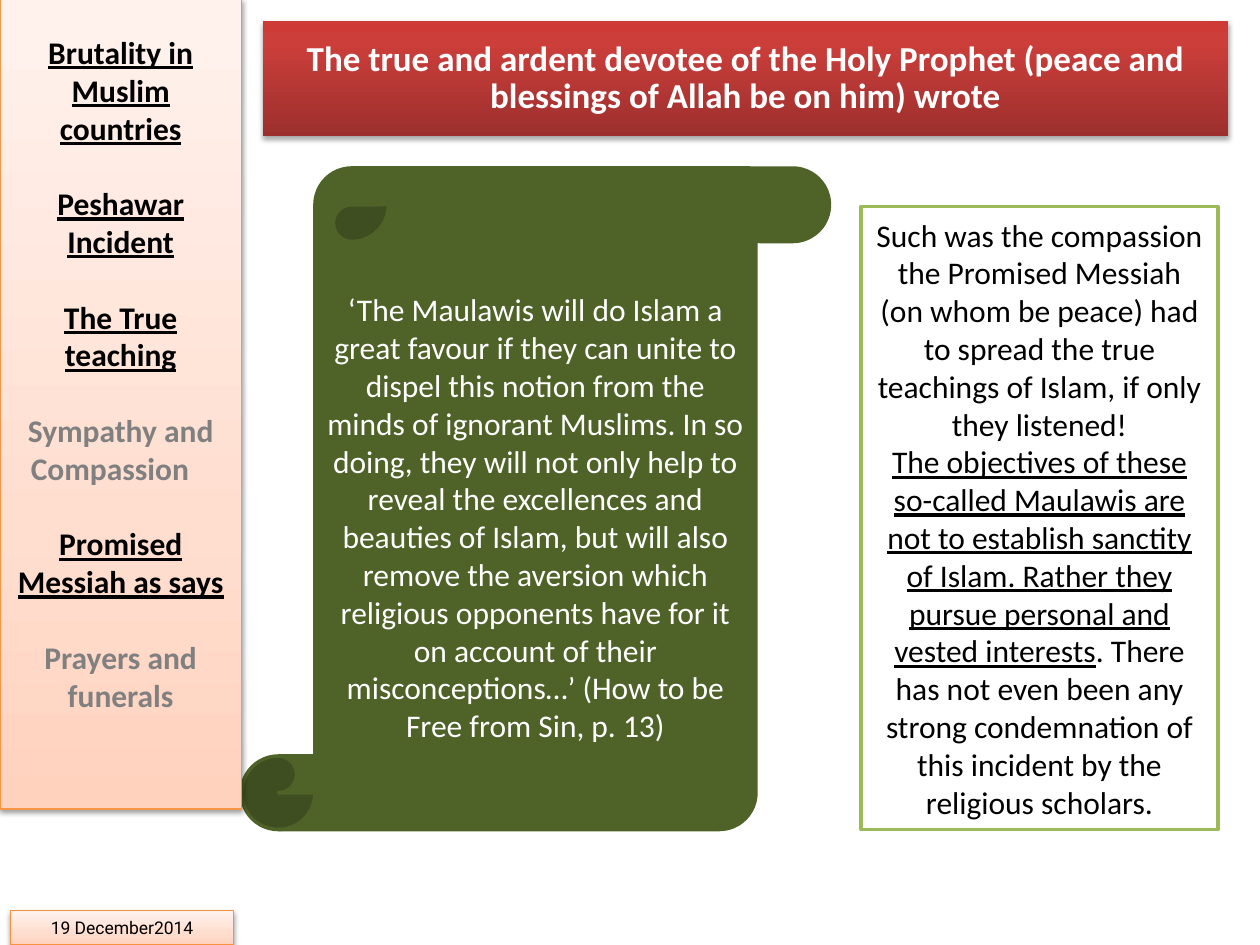
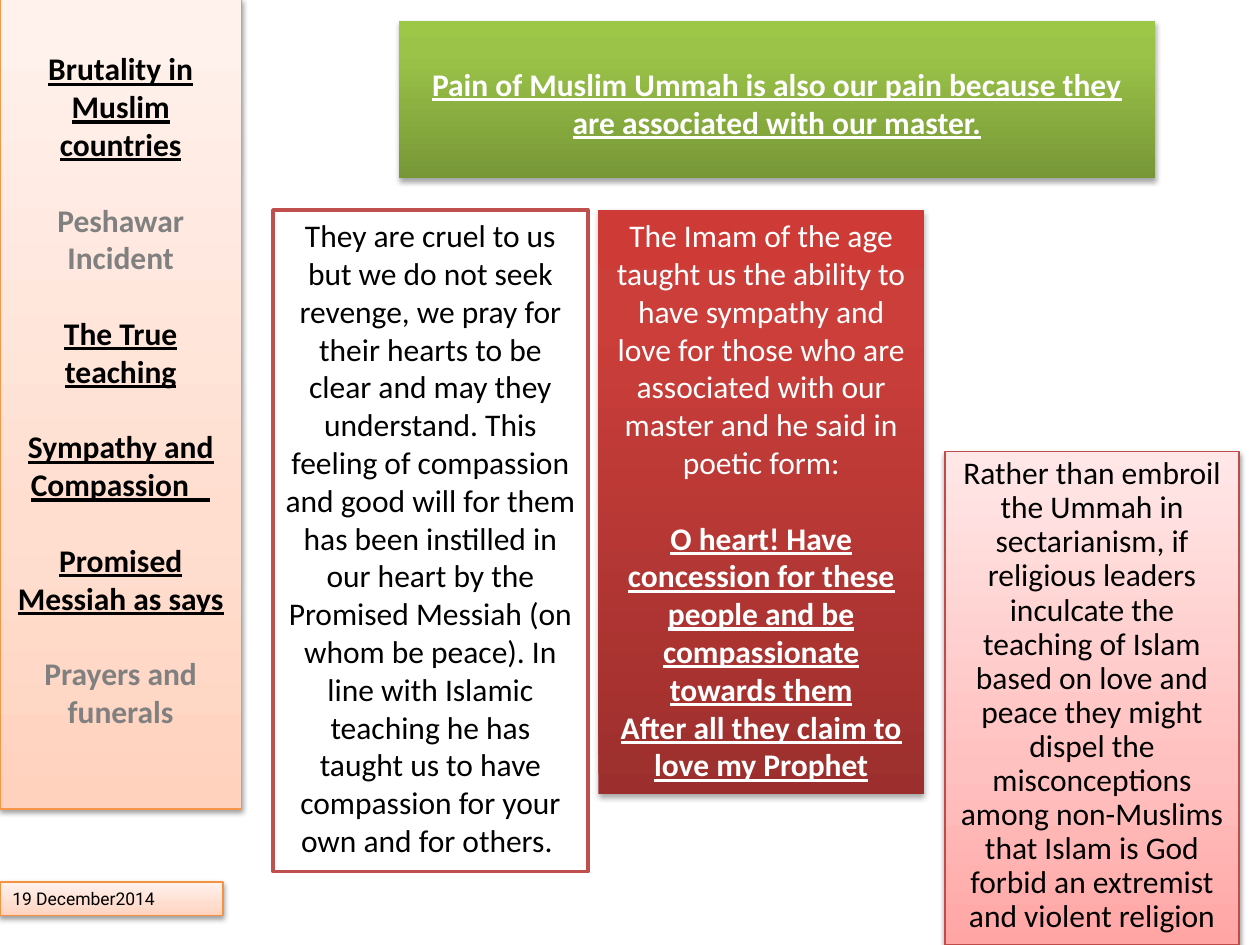
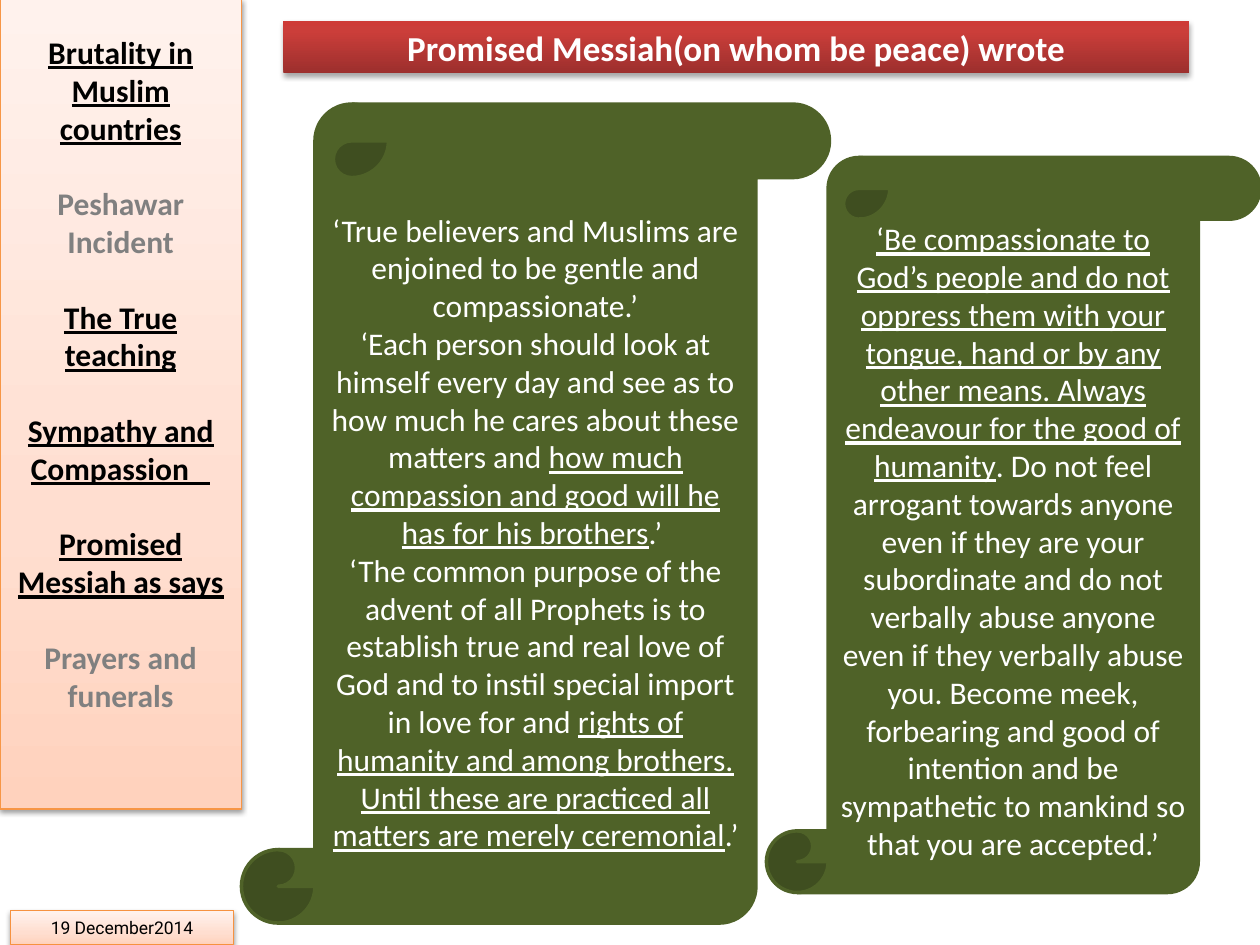
from dataclasses import dataclass
from typing import NamedTuple, Optional

from lxml.etree import SubElement
from pptx import Presentation
from pptx.dml.color import RGBColor
from pptx.enum.shapes import MSO_SHAPE
from pptx.enum.text import MSO_ANCHOR, PP_ALIGN
from pptx.oxml.ns import qn
from pptx.util import Pt

COLORS = {
    "white": "FFFFFF", "black": "000000", "muted": "808080",
    "scroll": "4F6228", "green_line": "9BBB59", "red_line": "C0504D",
    "menu_line": "F79646", "date_line": "F69240", "pink_line": "BF4C48",
}
# Gradient stops run from the bottom edge to the top edge
GRADIENTS = {
    "red": ((0, "9C2F2D"), (80, "CB3E3A"), (100, "CE3B37")),
    "green": ((0, "779737"), (80, "9BC348"), (100, "9DC746")),
    "peach": ((0, "FFD2BD"), (35, "FFDED0"), (100, "FFF2ED")),
    "pink": ((0, "FFA6A5"), (35, "FFC0BF"), (100, "FFE7E7")),
}
LINE_HEIGHT = 21.6  # one line of 18 pt text
MENU = ("Brutality in Muslim countries", "Peshawar Incident", "The True teaching",
        "Sympathy and Compassion   ", "Promised Messiah as says", "Prayers and funerals")


class Shadow(NamedTuple):
    opacity: int
    distance: float


STRONG = Shadow(35, 1.8)
SOFT = Shadow(38, 1.6)


class Span(NamedTuple):
    text: str
    underline: bool = False
    bold: bool = False
    color: Optional[str] = None


@dataclass(frozen=True)
class Style:
    fill: str
    line: Optional[str] = None
    line_width: float = 0.75
    shadow: Optional[Shadow] = None
    color: str = "black"
    size: float = 18
    font: str = "Calibri"
    geometry: MSO_SHAPE = MSO_SHAPE.RECTANGLE
    anchor: MSO_ANCHOR = MSO_ANCHOR.TOP
    margin_x: float = 7.2
    margin_top: float = 3.6
    margin_bottom: float = 3.6
    line_spacing: float = 1.0


@dataclass(frozen=True)
class Panel:
    left: float
    top: float
    width: float
    height: float
    style: Style
    paragraphs: tuple[tuple[Span, ...], ...]
    gaps: tuple[int, ...] = ()  # paragraphs preceded by one free line
    align: PP_ALIGN = PP_ALIGN.CENTER


def title_style(line_spacing: float) -> Style:
    return Style("red", shadow=STRONG, color="white", size=20, anchor=MSO_ANCHOR.MIDDLE,
                 margin_x=2.88, margin_top=2.88, margin_bottom=2.88,
                 line_spacing=line_spacing)


def card_style(line: str, anchor: MSO_ANCHOR = MSO_ANCHOR.TOP) -> Style:
    return Style("white", line, 2, anchor=anchor)


SCROLL = Style("scroll", "scroll", 2, color="white", geometry=MSO_SHAPE.VERTICAL_SCROLL,
               anchor=MSO_ANCHOR.MIDDLE)
DATE = Style("peach", "date_line", shadow=SOFT, size=10, font="Roboto")
BANNER = Style("green", shadow=STRONG, color="white", margin_top=3.6 + LINE_HEIGHT)
VERSE = Style("red", shadow=STRONG, color="white")
PINK_CARD = Style("pink", "pink_line", shadow=SOFT, line_spacing=0.9)


def rgb(name: str) -> RGBColor:
    return RGBColor.from_string(COLORS[name])


def paint(shape, style: Style) -> None:
    """Set fill, outline and shadow."""
    properties = shape._element.spPr
    if style.fill in GRADIENTS:
        shape.fill.gradient()
        shape.fill.gradient_angle = 90
        stops = properties.find(qn("a:gradFill")).find(qn("a:gsLst"))
        for old_stop in list(stops):
            stops.remove(old_stop)
        for percent, color in GRADIENTS[style.fill]:
            stop = SubElement(stops, qn("a:gs"), pos=str(percent * 1000))
            SubElement(stop, qn("a:srgbClr"), val=color)
    else:
        shape.fill.solid()
        shape.fill.fore_color.rgb = rgb(style.fill)

    if style.line:
        shape.line.color.rgb = rgb(style.line)
        shape.line.width = Pt(style.line_width)
    else:
        shape.line.fill.background()

    shape.shadow.inherit = False
    if style.shadow:
        effect = SubElement(properties.find(qn("a:effectLst")), qn("a:outerShdw"),
                            blurRad=str(Pt(3.1)), dist=str(Pt(style.shadow.distance)),
                            dir="5400000", rotWithShape="0")
        color = SubElement(effect, qn("a:srgbClr"), val=COLORS["black"])
        SubElement(color, qn("a:alpha"), val=str(style.shadow.opacity * 1000))


def write(shape, panel: Panel) -> None:
    """Fill in the paragraphs and format their runs."""
    style, frame = panel.style, shape.text_frame
    frame.word_wrap = True
    frame.vertical_anchor = style.anchor
    frame.margin_left = frame.margin_right = Pt(style.margin_x)
    frame.margin_top, frame.margin_bottom = Pt(style.margin_top), Pt(style.margin_bottom)
    for index, spans in enumerate(panel.paragraphs):
        para = frame.add_paragraph() if index else frame.paragraphs[0]
        para.text = spans[0].text
        for span in spans[1:]:
            para.add_run().text = span.text
        para.alignment = panel.align
        para.line_spacing = style.line_spacing
        if index in panel.gaps:
            para.space_before = Pt(LINE_HEIGHT)
        for run, span in zip(para.runs, spans):
            run.font.name, run.font.size = style.font, Pt(style.size)
            run.font.bold, run.font.underline = span.bold, span.underline
            run.font.color.rgb = rgb(span.color or style.color)


def draw(page, panel: Panel) -> None:
    box = page.shapes.add_shape(panel.style.geometry, Pt(panel.left), Pt(panel.top),
                                Pt(panel.width), Pt(panel.height))
    paint(box, panel.style)
    write(box, panel)


def menu(muted: tuple[int, ...], margin_top: float = 19.6) -> Panel:
    style = Style("peach", "menu_line", shadow=SOFT, margin_top=margin_top)
    entries = tuple((Span(text, index not in muted, True,
                          "muted" if index in muted else "black"),)
                    for index, text in enumerate(MENU))
    return Panel(0, -0.72, 138, 463, style, entries, gaps=tuple(range(1, len(MENU))))


def date(left: float = 6, top: float = 520.5, align: PP_ALIGN = PP_ALIGN.CENTER) -> Panel:
    return Panel(left, top, 127.5, 19.4, DATE, ((Span("19 December2014"),),), align=align)


def title(left: float, width: float, height: float, text: str,
          line_spacing: float = 1.0) -> Panel:
    return Panel(left, 12, width, height, title_style(line_spacing),
                 ((Span(text, bold=True),),))


# Panels of each slide, from back to front
DEVOTEE = (
    title(150, 552, 66, "The true and ardent devotee of the Holy Prophet (peace and "
          "blessings of Allah be on him) wrote", 0.9),
    date(),
    Panel(138, 96, 336, 378, SCROLL, ((Span(
        "‘The Maulawis will do Islam a great favour if they can unite to dispel this notion "
        "from the minds of ignorant Muslims. In so doing, they will not only help to reveal "
        "the excellences and beauties of Islam, but will also remove the aversion which "
        "religious opponents have for it on account of their misconceptions…’ (How to be "
        "Free from Sin, p. 13)"),),)),
    menu(muted=(3, 5)),
    Panel(492, 118, 204, 356, card_style("green_line", MSO_ANCHOR.MIDDLE), (
        (Span("Such was the compassion the Promised Messiah (on whom be peace) had to spread "
              "the true teachings of Islam, if only they listened!"),),
        (Span("The objectives of these so-called Maulawis are not to establish sanctity of "
              "Islam. Rather they pursue personal and vested interests", underline=True),
         Span(". There has not even been any strong condemnation of this incident by the "
              "religious scholars.")),
    )),
)

COMPASSION = (
    Panel(342, 120, 186, 334, VERSE, (
        (Span("The Imam of the age taught us the ability to have sympathy and love for those "
              "who are associated with our master and he said in poetic form:"),),
        (Span("O heart! Have concession for these people and be compassionate towards them",
              True, True),),
        (Span("After all they claim to love my Prophet", True, True),),
    ), gaps=(1,)),
    Panel(228, 12, 432, 90, BANNER, ((Span(
        "Pain of Muslim Ummah is also our pain because they are associated with our master.",
        True, True),),)),
    date(0, 504, PP_ALIGN.LEFT),
    menu(muted=(1, 5), margin_top=29),
    Panel(156, 120, 180, 378, card_style("red_line"), ((Span(
        "They are cruel to us but we do not seek revenge, we pray for their hearts to be "
        "clear and may they understand. This feeling of compassion and good will for them "
        "has been instilled in our heart by the Promised Messiah (on whom be peace). In line "
        "with Islamic teaching he has taught us to have compassion for your own and for "
        "others. "),),)),
    Panel(540, 258, 168, 282, PINK_CARD, ((Span(
        "Rather than embroil the Ummah in sectarianism, if religious leaders inculcate the "
        "teaching of Islam based on love and peace they might dispel the misconceptions "
        "among non-Muslims that Islam is God forbid an extremist and violent religion"),),)),
)

WRITINGS = (
    title(162, 517.5, 30, "Promised Messiah(on whom be peace) wrote"),
    date(),
    Panel(138, 59.5, 336, 468, SCROLL, (
        (Span("‘True believers and Muslims are enjoined to be gentle and compassionate.’"),),
        (Span("‘Each person should look at himself every day and see as to how much he cares "
              "about these matters and "),
         Span("how much compassion and good will he has for his brothers", underline=True),
         Span(".’ ")),
        (Span("‘The common purpose of the advent of all Prophets is to establish true and "
              "real love of God and to instil special import in love for and "),
         Span("rights of humanity and among brothers. Until these are practiced all matters "
              "are merely ceremonial", underline=True),
         Span(".’")),
    )),
    Panel(438, 90, 282, 420, SCROLL, ((
        Span("‘Be compassionate to God’s people and do not oppress them with your tongue, "
             "hand or by any other means. Always endeavour for the good of humanity",
             underline=True),
        Span(". Do not feel arrogant towards anyone even if they are your subordinate and do "
             "not verbally abuse anyone even if they verbally abuse you. Become meek, "
             "forbearing and good of intention and be sympathetic to mankind so that you are "
             "accepted.’")),)),
    menu(muted=(1, 5)),
)


def main() -> None:
    deck = Presentation()
    deck.slide_width, deck.slide_height = Pt(720), Pt(540)
    for panels in (DEVOTEE, COMPASSION, WRITINGS):
        page = deck.slides.add_slide(deck.slide_layouts[6])
        for panel in panels:
            draw(page, panel)
    deck.save("out.pptx")


if __name__ == "__main__":
    main()
